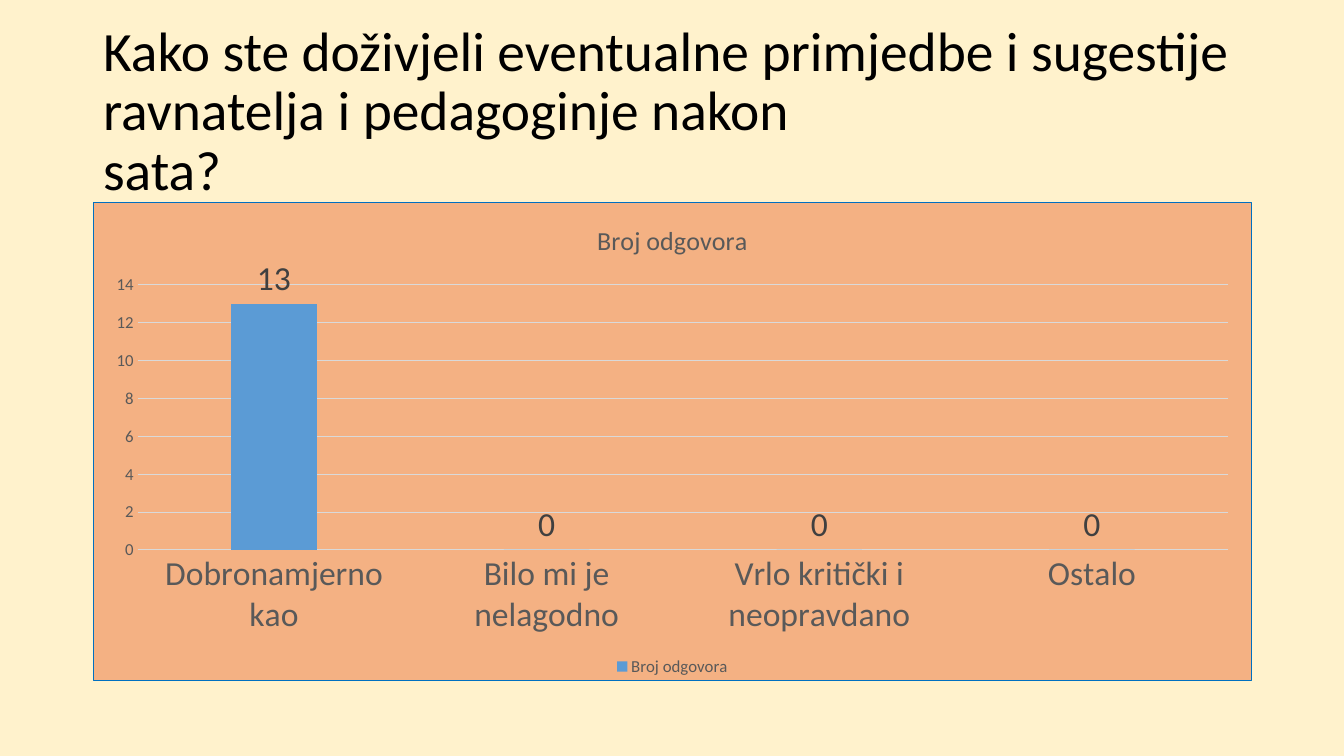
from lxml import etree
from pptx import Presentation
from pptx import util as u
from pptx.chart import data
from pptx.dml import color
from pptx.enum import chart as charts, text
from pptx.oxml import ns

SCALE = 914400 / 100.8
FONT = "Calibri"
SERIES = "Broj odgovora"
ANSWERS = {
    "Dobronamjerno kao": 13,
    "Bilo mi je nelagodno": 0,
    "Vrlo kritički i neopravdano": 0,
    "Ostalo": 0,
}
QUESTION = [
    "Kako ste doživjeli eventualne primjedbe i sugestije "
    "ravnatelja i pedagoginje nakon",
    "sata?",
]


def px(length):
    return u.Emu(round(length * SCALE))


def rgb(value):
    return color.RGBColor.from_string(value)


def style_font(font, size, shade):
    font.name = FONT
    font.size = u.Pt(size)
    font.bold = False
    font.color.rgb = rgb(shade)


def style_line(line, shade):
    line.color.rgb = rgb(shade)
    line.width = u.Pt(0.75)


def set_title(page, lines):
    box = page.shapes.title
    box.left, box.top, box.width, box.height = map(px, (93, 40, 1159, 146))
    frame = box.text_frame
    frame.word_wrap = True
    frame.auto_size = text.MSO_AUTO_SIZE.NONE
    frame.vertical_anchor = text.MSO_ANCHOR.MIDDLE
    para = frame.paragraphs[0]
    para.alignment = text.PP_ALIGN.LEFT
    para.line_spacing = 0.9
    for index, line in enumerate(lines):
        if index:
            para.add_line_break()
        span = para.add_run()
        span.text = line
        style_font(span.font, 39.6, "000000")


def fill_chart_area(chart, fill, border):
    area = etree.Element(ns.qn("c:spPr"))
    solid = etree.SubElement(area, ns.qn("a:solidFill"))
    line = etree.SubElement(area, ns.qn("a:ln"), w=str(u.Pt(0.75)))
    outline = etree.SubElement(line, ns.qn("a:solidFill"))
    for parent, shade in ((solid, fill), (outline, border)):
        etree.SubElement(parent, ns.qn("a:srgbClr"), val=shade)
    chart.element.find(ns.qn("c:chart")).addnext(area)


def style_axes(chart):
    for axis, size in ((chart.category_axis, 24), (chart.value_axis, 12)):
        axis.major_tick_mark = charts.XL_TICK_MARK.NONE
        axis.minor_tick_mark = charts.XL_TICK_MARK.NONE
        style_font(axis.tick_labels.font, size, "595959")
    style_line(chart.category_axis.format.line, "D9D9D9")
    values = chart.value_axis
    values.minimum_scale, values.maximum_scale, values.major_unit = 0, 14, 2
    values.format.line.fill.background()
    values.has_major_gridlines = True
    style_line(values.major_gridlines.format.line, "D9D9D9")


def style_columns(plot):
    plot.gap_width = 219
    plot.overlap = -27
    plot.vary_by_categories = False
    columns = plot.series[0]
    columns.invert_if_negative = False
    columns.format.fill.solid()
    columns.format.fill.fore_color.rgb = rgb("5B9BD5")
    labels = columns.data_labels
    labels.show_value = True
    labels.position = charts.XL_LABEL_POSITION.OUTSIDE_END
    style_font(labels.font, 24, "404040")


def add_answer_chart(page):
    answers = data.CategoryChartData()
    answers.categories = list(ANSWERS)
    answers.add_series(SERIES, list(ANSWERS.values()))
    chart = page.shapes.add_chart(
        charts.XL_CHART_TYPE.COLUMN_CLUSTERED,
        *map(px, (93, 202, 1159, 479)), answers,
    ).chart
    style_font(chart.font, 10, "000000")
    fill_chart_area(chart, "F4B183", "0070C0")
    chart.has_title = True
    chart.chart_title.include_in_layout = False
    span = chart.chart_title.text_frame.paragraphs[0].add_run()
    span.text = SERIES
    style_font(span.font, 18.6, "595959")
    chart.has_legend = True
    chart.legend.position = charts.XL_LEGEND_POSITION.BOTTOM
    chart.legend.include_in_layout = False
    style_font(chart.legend.font, 12, "595959")
    style_axes(chart)
    style_columns(chart.plots[0])


def main():
    deck = Presentation()
    deck.slide_width, deck.slide_height = px(1344), px(756)
    page = deck.slides.add_slide(deck.slide_layouts[5])
    page.background.fill.solid()
    page.background.fill.fore_color.rgb = rgb("FFF2CC")
    set_title(page, QUESTION)
    add_answer_chart(page)
    deck.save("out.pptx")


if __name__ == "__main__":
    main()
